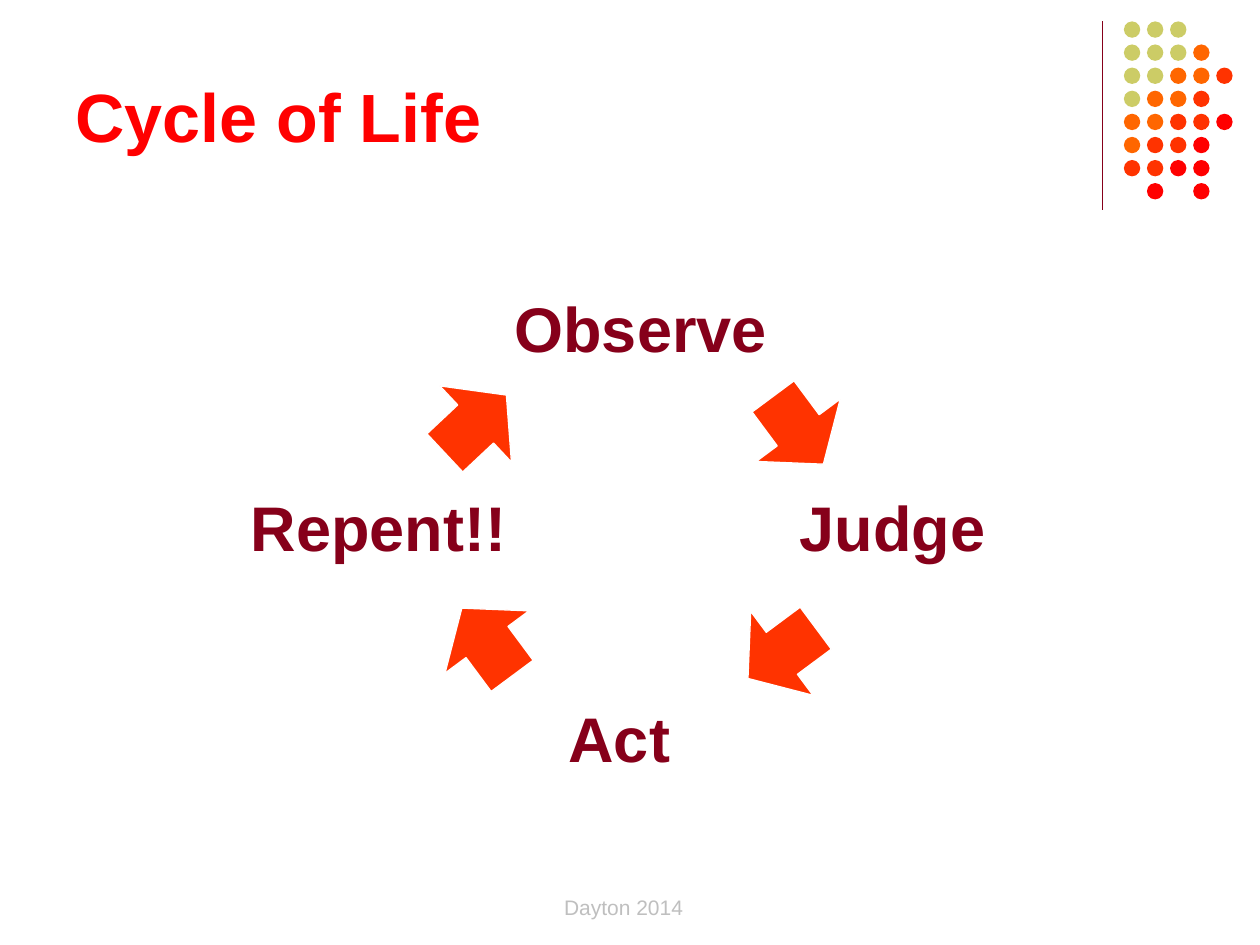
import pptx
import pptx.util
import pptx.dml.color
import pptx.enum.shapes
import pptx.enum.text
import pptx.oxml
from pptx.util import Inches

MSO_SHAPE = pptx.enum.shapes.MSO_SHAPE
ANCHOR = pptx.enum.text.MSO_ANCHOR
ALIGN = pptx.enum.text.PP_ALIGN


class Theme:
    font = "Arial"
    title, label, arrow = "FF0000", "86001A", "FF3300"
    outline, footer = "FFFFFF", "BFBFBF"
    dots = {"g": "CCCC66", "o": "FF6600", "v": "FF3300", "r": "FF0000"}
    title_size, label_size, footer_size = 39, 36, 12


def rgb(value):
    return pptx.dml.color.RGBColor.from_string(value)


def write(sp, text, size, color, bold, align, anchor):
    tf = sp.text_frame
    tf.word_wrap = True
    tf.auto_size = pptx.enum.text.MSO_AUTO_SIZE.NONE
    tf.vertical_anchor = anchor
    p = tf.paragraphs[0]
    p.alignment = align
    r = p.add_run()
    r.text = text
    r.font.name = Theme.font
    r.font.size = pptx.util.Pt(size)
    r.font.bold = bold
    r.font.color.rgb = rgb(color)


prs = pptx.Presentation()
prs.slide_width, prs.slide_height = Inches(10), Inches(7.5)
s = prs.slides.add_slide(prs.slide_layouts[5])

# Corner rule
rule = s.shapes.add_connector(pptx.enum.shapes.MSO_CONNECTOR.STRAIGHT,
                              Inches(8.75), Inches(0.17), Inches(8.75), Inches(1.67))
rule.line.color.rgb = rgb(Theme.label)
rule.line.width = pptx.util.Pt(0.75)
rule._element.spPr.append(pptx.oxml.parse_xml(
    '<a:effectLst xmlns:a="http://schemas.openxmlformats.org/drawingml/2006/main"/>'))

# Corner dots: one letter per dot, a space where there is none
dot_rows = ["ggg", "gggo", "ggoov", "goov", "oovvr", "ovvr", "vvrr", " r r"]
pitch = Inches(0.55) / 3
dots = s.shapes.add_group_shape()
for row, keys in enumerate(dot_rows):
    for col, key in enumerate(keys):
        if key == " ":
            continue
        sp = dots.shapes.add_shape(MSO_SHAPE.OVAL,
                                   int(Inches(8.92) + col * pitch),
                                   int(Inches(0.17) + row * pitch),
                                   Inches(0.13), Inches(0.13))
        sp.shadow.inherit = False
        sp.fill.solid()
        sp.fill.fore_color.rgb = rgb(Theme.dots[key])
        sp.line.fill.background()

# Title
title = s.shapes.title
title.left, title.top = Inches(0.5), Inches(0.42)
title.width, title.height = Inches(8.17), Inches(0.87)
write(title, "Cycle of Life", Theme.title_size, Theme.title, True,
      ALIGN.LEFT, ANCHOR.BOTTOM)

# Stages of the cycle
stages = [("Observe", 3.75, 2.25), ("Judge", 5.75, 3.83),
          ("Act", 3.58, 5.5), ("Repent!!", 1.67, 3.83)]
for text, left, top in stages:
    sp = s.shapes.add_textbox(Inches(left), Inches(top), Inches(2.67), Inches(0.71))
    write(sp, text, Theme.label_size, Theme.label, True, ALIGN.CENTER, ANCHOR.TOP)

# Arrows between the stages, clockwise
arrows = [(6, 3, 53.4), (5.87, 4.77, 143.4), (3.53, 4.68, 233.4), (3.44, 2.95, 316.8)]
for left, top, angle in arrows:
    sp = s.shapes.add_shape(MSO_SHAPE.RIGHT_ARROW, Inches(left), Inches(top),
                            Inches(0.67), Inches(0.83))
    sp.rotation = angle
    sp.shadow.inherit = False
    sp.fill.solid()
    sp.fill.fore_color.rgb = rgb(Theme.arrow)
    sp.line.color.rgb = rgb(Theme.outline)
    sp.line.width = pptx.util.Pt(0.75)

# Footer
footer = s.shapes.add_textbox(Inches(3.5), Inches(7), Inches(2.9), Inches(0.4))
write(footer, "Dayton 2014", Theme.footer_size, Theme.footer, False,
      ALIGN.CENTER, ANCHOR.MIDDLE)

prs.save("out.pptx")
